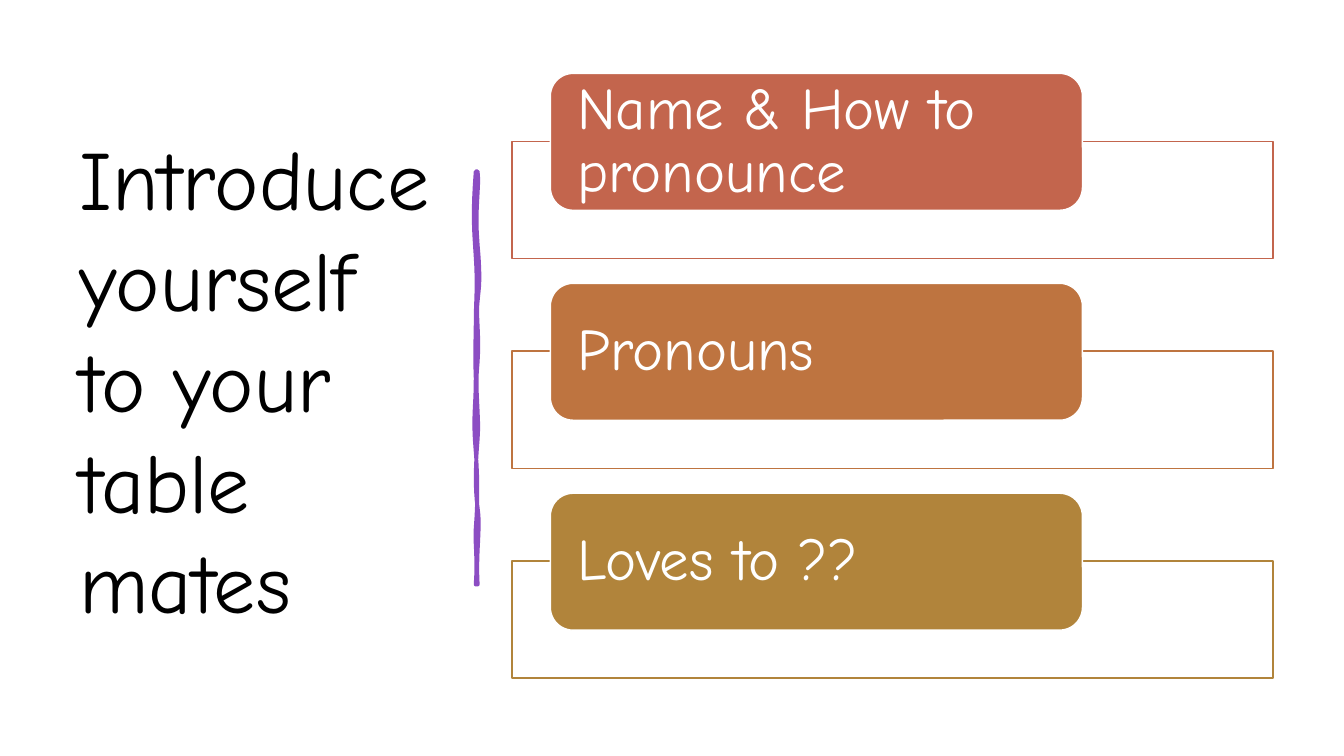
from pptx import Presentation
from pptx.dml.color import RGBColor
from pptx.enum.shapes import MSO_SHAPE as Shape
from pptx.enum.text import MSO_ANCHOR as Anchor, MSO_AUTO_SIZE as AutoSize, PP_ALIGN as Align
from pptx.util import Cm, Pt

COLORS = {
    "white": "FFFFFF",
    "black": "000000",
    "purple": "8C4DC3",
    "red": "C3654D",
    "orange": "BE7440",
    "gold": "B1843B",
}
TOPICS = [
    ("Name & How to pronounce", "red"),
    ("Pronouns", "orange"),
    ("Loves to ??", "gold"),
]
FIRST_CARD_TOP = 1.85
CARD_STEP = 5.29
FRAME_DROP = 1.71

STROKE_START = (11.99, 4.32)
STROKE_CURVES = [
    ((12.01, 4.32), (12.01, 4.32), (12.04, 4.32)),
    ((12.09, 4.72), (11.96, 5.26), (12.04, 6.17)),
    ((12.12, 7.09), (12.07, 7.24), (12.04, 7.59)),
    ((11.99, 7.95), (12.09, 8.41), (12.04, 9.12)),
    ((11.96, 9.83), (12.09, 10.49), (12.04, 11.07)),
    ((11.99, 11.63), (11.96, 12.32), (12.04, 12.8)),
    ((12.12, 13.28), (11.99, 13.92), (12.04, 14.73)),
    ((12.01, 14.73), (12.01, 14.73), (11.99, 14.73)),
    ((12.04, 14.07), (11.96, 13.61), (11.99, 13.31)),
    ((12.01, 13.03), (12.07, 12.27), (11.99, 11.38)),
    ((11.91, 10.49), (11.99, 10.31), (11.99, 9.53)),
    ((11.96, 8.76), (11.99, 8.66), (11.99, 8.1)),
    ((11.99, 7.57), (12.04, 7.24), (11.99, 6.48)),
    ((11.94, 5.74), (11.91, 5.38), (11.99, 4.32)),
]


def sample_curves(start, curves, steps=8):
    points = []
    for first, second, end in curves:
        for step in range(1, steps + 1):
            t = step / steps
            u = 1 - t
            points.append(tuple(
                Cm(u**3 * a + 3 * u * u * t * b + 3 * u * t * t * c + t**3 * d)
                for a, b, c, d in zip(start, first, second, end)
            ))
        start = end
    return points


class SlideBuilder:
    font = "Comic Neue"

    def __init__(self, presentation):
        self.slide = presentation.slides.add_slide(presentation.slide_layouts[5])

    def color(self, name):
        return RGBColor.from_string(COLORS[name])

    def paint(self, shape, fill, line, width):
        shape.shadow.inherit = False
        shape.fill.solid()
        shape.fill.fore_color.rgb = self.color(fill)
        shape.line.color.rgb = self.color(line)
        shape.line.width = Pt(width)

    def add_text(self, shape, text, size, color, spacing):
        frame = shape.text_frame
        frame.word_wrap = True
        frame.auto_size = AutoSize.NONE
        frame.vertical_anchor = Anchor.MIDDLE
        paragraph = frame.paragraphs[0]
        paragraph.alignment = Align.LEFT
        paragraph.line_spacing = spacing
        run = paragraph.add_run()
        run.text = text
        run.font.name = self.font
        run.font.size = Pt(size)
        run.font.color.rgb = self.color(color)

    def title(self, text, left, top, width, height):
        shape = self.slide.shapes.title
        shape.left, shape.top = Cm(left), Cm(top)
        shape.width, shape.height = Cm(width), Cm(height)
        self.add_text(shape, text, 60, "black", 1.0)

    def box(self, kind, left, top, width, height, fill, line):
        shape = self.slide.shapes.add_shape(
            kind, Cm(left), Cm(top), Cm(width), Cm(height))
        self.paint(shape, fill, line, 1)
        return shape

    def card(self, text, top, color):
        self.box(Shape.RECTANGLE, 12.9, top + FRAME_DROP, 19.18, 2.95, "white", color)
        label = self.box(Shape.ROUNDED_RECTANGLE, 13.87, top, 13.41, 3.45, color, "white")
        frame = label.text_frame
        frame.margin_left = frame.margin_right = Cm(0.51)
        frame.margin_top = frame.margin_bottom = 0
        self.add_text(label, text, 42, "white", 0.9)

    def brush_stroke(self, start, curves, color):
        builder = self.slide.shapes.build_freeform(Cm(start[0]), Cm(start[1]))
        builder.add_line_segments(sample_curves(start, curves), close=True)
        self.paint(builder.convert_to_shape(), color, color, 2.75)


def main():
    presentation = Presentation()
    presentation.slide_width = Cm(33.87)
    presentation.slide_height = Cm(19.05)
    builder = SlideBuilder(presentation)
    builder.title("Introduce yourself to your table mates", 1.75, 1.78, 9.5, 15.52)
    builder.brush_stroke(STROKE_START, STROKE_CURVES, "purple")
    for index, (text, color) in enumerate(TOPICS):
        builder.card(text, FIRST_CARD_TOP + index * CARD_STEP, color)
    presentation.save("out.pptx")


if __name__ == "__main__":
    main()
